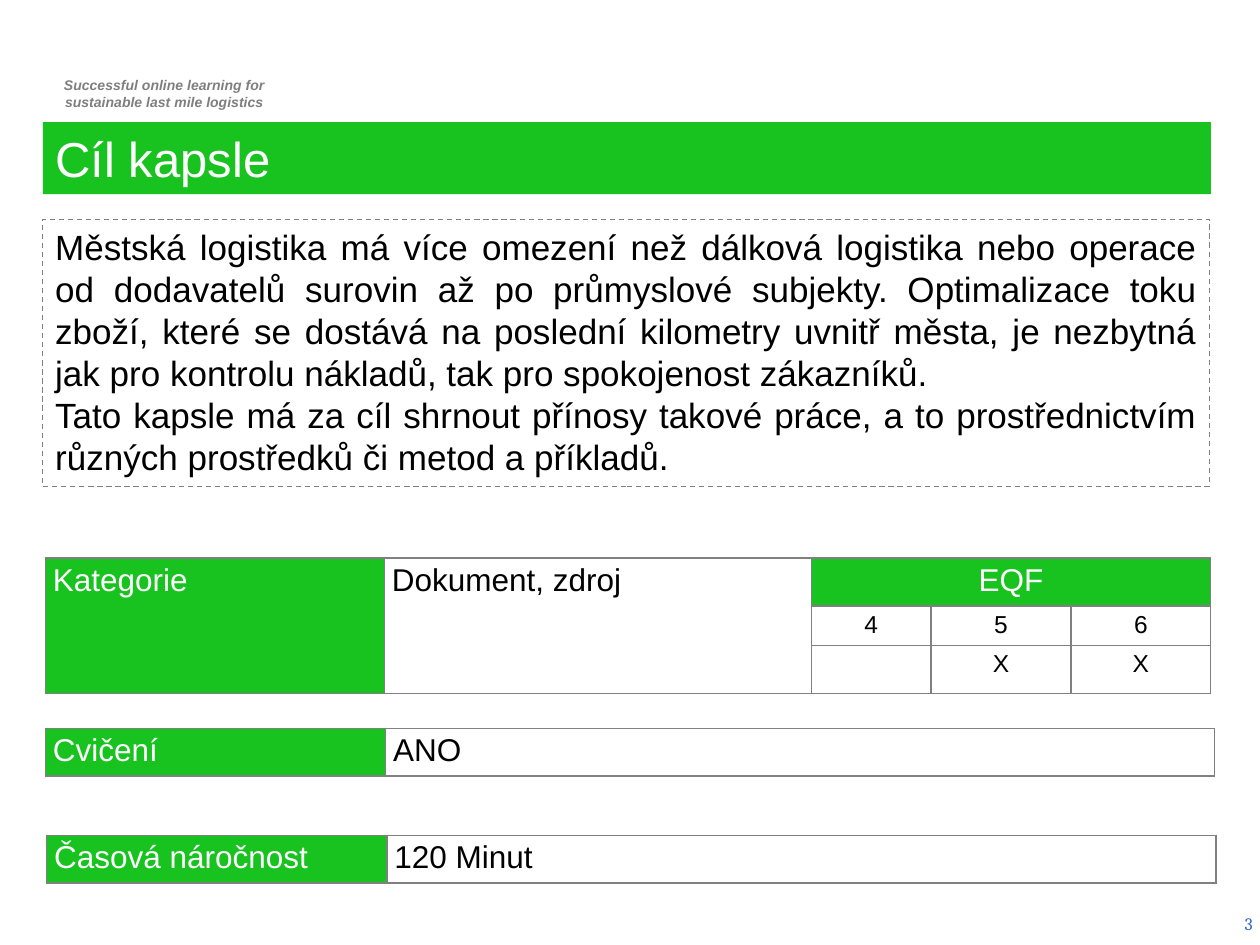
from pptx import Presentation
from pptx.dml.color import RGBColor
from pptx.enum.dml import MSO_LINE
from pptx.enum.shapes import MSO_SHAPE
from pptx.enum.text import MSO_ANCHOR, MSO_AUTO_SIZE, PP_ALIGN
from pptx.oxml import parse_xml
from pptx.oxml.ns import nsdecls
from pptx.util import Inches, Pt

LEFT, MID, RIGHT, JUST = (PP_ALIGN.LEFT, PP_ALIGN.CENTER,
                          PP_ALIGN.RIGHT, PP_ALIGN.JUSTIFY)
TOP, CENTER = MSO_ANCHOR.TOP, MSO_ANCHOR.MIDDLE
RECT, DASH, FIXED = MSO_SHAPE.RECTANGLE, MSO_LINE.DASH, MSO_AUTO_SIZE.NONE

HEX = {"green": "18C320", "gray": "808080", "motto": "7F7F7F",
       "blue": "3366CC", "white": "FFFFFF", "black": "000000"}

# The slide is a grid of 100 columns by 75 rows
WIDE, HIGH = Inches(10), Inches(7.5)
COL, ROW = WIDE / 100, HIGH / 75


def color(name):
    return RGBColor.from_string(HEX[name])


def place(box):
    x, y, w, h = box
    return int(x * COL), int(y * ROW), int(w * COL), int(h * ROW)


def write(frame, text, size, ink, align=LEFT, face="Arial", bold=False, slant=False):
    frame.text = text
    for para in frame.paragraphs:
        para.alignment = align
        for run in para.runs:
            font = run.font
            font.name, font.size = face, Pt(size)
            font.bold, font.italic = bold, slant
            font.color.rgb = color(ink)


def label(slide, box, anchor, *text, **style):
    frame = slide.shapes.add_textbox(*place(box)).text_frame
    frame.word_wrap = True
    frame.vertical_anchor = anchor
    write(frame, *text, **style)


def heading(slide, box, text):
    title = slide.shapes.title
    title.left, title.top, title.width, title.height = place(box)
    title.fill.solid()
    title.fill.fore_color.rgb = color("green")
    frame = title.text_frame
    frame.auto_size = FIXED
    frame.vertical_anchor = TOP
    write(frame, text, 28, "white")


def summary(slide, box, text):
    panel = slide.shapes.add_shape(RECT, *place(box))
    panel.shadow.inherit = False
    panel.fill.background()
    panel.line.color.rgb = color("gray")
    panel.line.width = Pt(0.75)
    panel.line.dash_style = DASH
    panel.text_frame.word_wrap = True
    panel.text_frame.vertical_anchor = TOP
    write(panel.text_frame, text, 20, "black", JUST)


def border(cell):
    props = cell._tc.get_or_add_tcPr()
    for side in ("lnL", "lnR", "lnT", "lnB"):
        props.append(parse_xml(
            f'<a:{side} {nsdecls("a")} w="12700"><a:solidFill>'
            f'<a:srgbClr val="{HEX["gray"]}"/></a:solidFill></a:{side}>'))


def grid(slide, spot, cols, rows):
    """Add a bordered table with clear cells; sizes are in grid units."""
    box = (*spot, sum(cols), sum(rows))
    table = slide.shapes.add_table(len(rows), len(cols), *place(box)).table
    table.first_row = table.horz_banding = False
    for part, size in zip(table.columns, cols):
        part.width = int(size * COL)
    for part, size in zip(table.rows, rows):
        part.height = int(size * ROW)
    for cell in table.iter_cells():
        border(cell)
        cell.fill.background()
        cell.margin_left = cell.margin_right = Inches(0.06)
        cell.margin_top = cell.margin_bottom = Inches(0.04)
    return table


def head(cell, text, align=JUST):
    cell.fill.solid()
    cell.fill.fore_color.rgb = color("green")
    write(cell.text_frame, text, 18, "white", align)


def level(slide, spot):
    table = grid(slide, spot, (26.9, 33.9, 9.5, 11.1, 11.1), (3.65, 3.1, 3.75))
    for col in (0, 1):
        table.cell(0, col).merge(table.cell(2, col))
    table.cell(0, 2).merge(table.cell(0, 4))
    head(table.cell(0, 0), "Kategorie")
    write(table.cell(0, 1).text_frame, "Dokument, zdroj", 18, "black", JUST)
    head(table.cell(0, 2), "EQF", MID)
    marks = {1: ("4", "5", "6"), 2: ("", "X", "X")}
    for row, texts in marks.items():
        for col, text in enumerate(texts, 2):
            write(table.cell(row, col).text_frame, text, 14, "black", MID)


def fact(slide, spot, name, value):
    table = grid(slide, spot, (27, 65.8), (3.7,))
    head(table.cell(0, 0), name)
    write(table.cell(0, 1).text_frame, value, 18, "black", JUST)


def main():
    deck = Presentation()
    deck.slide_width, deck.slide_height = WIDE, HIGH
    slide = deck.slides.add_slide(deck.slide_layouts[5])

    # Project motto and page number
    label(slide, (2.9, 5.6, 20.3, 3.7), TOP,
          "Successful online learning for\nsustainable last mile logistics",
          8, "motto", MID, bold=True, slant=True)
    label(slide, (77.1, 71.3, 23.3, 4), CENTER, "3", 10, "blue", RIGHT, face="Cambria")

    # Title bar and summary
    heading(slide, (3.4, 9.7, 92.7, 5.7), "Cíl kapsle")
    summary(slide, (3.4, 17.4, 92.6, 21.2),
            "Městská logistika má více omezení než dálková logistika nebo operace "
            "od dodavatelů surovin až po průmyslové subjekty. Optimalizace toku "
            "zboží, které se dostává na poslední kilometry uvnitř města, je nezbytná "
            "jak pro kontrolu nákladů, tak pro spokojenost zákazníků.\n"
            "Tato kapsle má za cíl shrnout přínosy takové práce, a to "
            "prostřednictvím různých prostředků či metod a příkladů.")

    # Tables of facts
    level(slide, (3.6, 44.3))
    fact(slide, (3.6, 57.8), "Cvičení", "ANO")
    fact(slide, (3.7, 66.3), "Časová náročnost", "120 Minut")

    deck.save("out.pptx")


if __name__ == "__main__":
    main()
